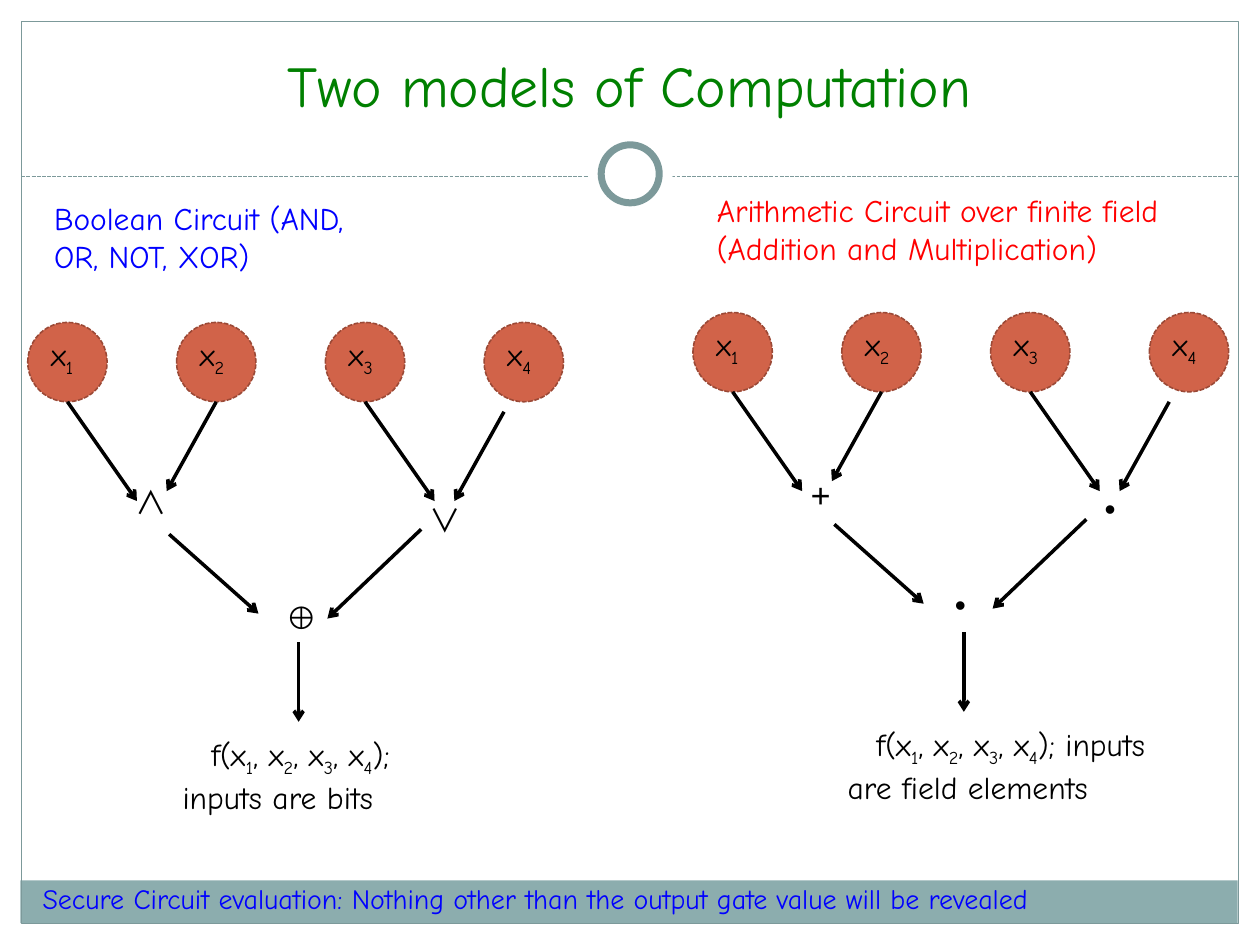
from dataclasses import dataclass
from itertools import groupby

from lxml.etree import SubElement
from pptx import Presentation
from pptx.dml.color import RGBColor
from pptx.enum.dml import MSO_LINE
from pptx.enum.shapes import MSO_CONNECTOR, MSO_SHAPE
from pptx.enum.text import MSO_ANCHOR, MSO_AUTO_SIZE, PP_ALIGN
from pptx.oxml.ns import qn
from pptx.util import Cm, Pt

HAND, SERIF, SANS, MATH = "Comic Neue", "TeX Gyre Schola", "Arial", "Noto Sans CJK JP"
BLACK, WHITE, BLUE, RED, GREEN = "000000", "FFFFFF", "0000FF", "FF0000", "008000"
TEAL, PALE_TEAL, BRICK, DARK_BRICK = "7C999A", "8CADAE", "D16349", "9B4936"

# Positions below are in cm; those of a circuit count from its first input.
INPUT_SIZE = 1.6
INPUT_LEFTS = (0, 3, 6, 9.2)
WIRES = (
    ((0.8, 1.6), (2.2, 3.6)),
    ((3.8, 1.6), (2.8, 3.4)),
    ((6.8, 1.6), (8.2, 3.6)),
    ((9.6, 1.8), (8.6, 3.6)),
    ((2.85, 4.27), (4.65, 5.87)),
    ((7.93, 4.17), (6.04, 5.97)),
    ((5.46, 6.45), (5.46, 8.05)),
)


@dataclass
class Gate:
    symbol: str
    font: str
    left: float
    top: float
    width: float


@dataclass
class Circuit:
    left: float
    top: float
    gates: tuple[Gate, ...]
    output: str
    output_width: float


@dataclass
class Caption:
    text: str
    left: float
    top: float
    width: float
    color: str
    size: float = 18


CAPTIONS = (
    Caption("Secure Circuit evaluation: Nothing other than the output gate value "
            "will be revealed", 0.61, 17.65, 24.28, BLUE, 16),
    Caption("Boolean Circuit (AND, OR, NOT, XOR)", 0.84, 3.89, 7.34, BLUE),
    Caption("Arithmetic Circuit over finite field (Addition and Multiplication)",
            14.2, 3.73, 10.67, RED),
)
CIRCUITS = (
    Circuit(0.56, 6.5, (
        Gate("∧", MATH, 1.93, 3.12, 1.4),
        Gate("∨", MATH, 7.85, 3.48, 1.14),
        Gate("⊕", SERIF, 4.95, 5.44, 1.02),
    ), "f(x1, x2, x3, x4); inputs are bits", 5.97),
    Circuit(13.97, 6.3, (
        Gate("+", SERIF, 2.13, 3.12, 1.4),
        Gate("•", SANS, 8.05, 3.43, 0.81),
        Gate("•", SANS, 5.03, 5.36, 1.4),
    ), "f(x1, x2, x3, x4); inputs are field elements", 6.55),
)


def rgb(color: str) -> RGBColor:
    return RGBColor.from_string(color)


def format_span(span, font: str, size: float, color: str) -> None:
    span.font.name = font
    span.font.size = Pt(size)
    span.font.color.rgb = rgb(color)
    SubElement(span._r.rPr, qn("a:ea")).set("typeface", font)


def add_text(shapes, text: str, left: float, top: float, width: float,
             color: str = BLACK, size: float = 18, font: str = HAND,
             indent: float = 0) -> None:
    """Add a text box in which digits become subscripts."""
    box = shapes.add_textbox(Cm(left), Cm(top), Cm(width), Cm(1.02))
    box.text_frame.word_wrap = True
    box.text_frame.auto_size = MSO_AUTO_SIZE.SHAPE_TO_FIT_TEXT
    para = box.text_frame.paragraphs[0]
    if indent:
        para._p.get_or_add_pPr().set("indent", str(Cm(indent)))
    for is_digit, letters in groupby(text, str.isdigit):
        span = para.add_run()
        span.text = "".join(letters)
        format_span(span, font, size, color)
        if is_digit:
            span._r.rPr.set("baseline", "-25000")


def add_figure(shapes, kind, left: float, top: float, width: float, height: float,
               fill: str | None = None, line: str | None = None, weight: float = 0.75):
    figure = shapes.add_shape(kind, Cm(left), Cm(top), Cm(width), Cm(height))
    figure.shadow.inherit = False
    if fill:
        figure.fill.solid()
        figure.fill.fore_color.rgb = rgb(fill)
    else:
        figure.fill.background()
    if line:
        figure.line.color.rgb = rgb(line)
        figure.line.width = Pt(weight)
    else:
        figure.line.fill.background()
    return figure


def add_line(shapes, start: tuple[float, float], end: tuple[float, float],
             color: str, weight: float):
    line = shapes.add_connector(MSO_CONNECTOR.STRAIGHT, *map(Cm, start + end))
    line.line.color.rgb = rgb(color)
    line.line.width = Pt(weight)
    SubElement(line._element.spPr, qn("a:effectLst"))
    return line


def add_arrow(shapes, start: tuple[float, float], end: tuple[float, float]) -> None:
    arrow = add_line(shapes, start, end, BLACK, 2)
    SubElement(arrow.line._get_or_add_ln(), qn("a:tailEnd")).set("type", "arrow")


def add_frame(shapes) -> None:
    """Add the border, the footer band and the ringed divider."""
    add_figure(shapes, MSO_SHAPE.RECTANGLE, 0.41, 17.75, 24.54, 0.86, PALE_TEAL)
    add_figure(shapes, MSO_SHAPE.RECTANGLE, 0.43, 0.43, 24.54, 18.19, line=TEAL)
    divider = add_line(shapes, (0.43, 3.56), (24.97, 3.56), TEAL, 0.75)
    divider.line.dash_style = MSO_LINE.SQUARE_DOT
    add_figure(shapes, MSO_SHAPE.OVAL, 11.86, 2.67, 1.7, 1.7, WHITE)
    add_figure(shapes, MSO_SHAPE.OVAL, 12.12, 2.92, 1.17, 1.17, WHITE, TEAL, 4)


def add_circuit(shapes, circuit: Circuit) -> None:
    left, top = circuit.left, circuit.top
    for number, offset in enumerate(INPUT_LEFTS, start=1):
        group = shapes.add_group_shape().shapes
        disc = add_figure(group, MSO_SHAPE.OVAL, left + offset, top, INPUT_SIZE,
                          INPUT_SIZE, BRICK, DARK_BRICK, 0.9)
        disc.line.dash_style = MSO_LINE.SQUARE_DOT
        add_text(group, f"x{number}", left + offset + 0.22, top + 0.13, 1.37)
    for (x1, y1), (x2, y2) in WIRES:
        add_arrow(shapes, (left + x1, top + y1), (left + x2, top + y2))
    for gate in circuit.gates:
        add_text(shapes, gate.symbol, left + gate.left, top + gate.top, gate.width,
                 font=gate.font)
    add_text(shapes, circuit.output, left + 2.87, top + 8.19, circuit.output_width,
             indent=0.58)


def format_title(title) -> None:
    title.left, title.top, title.width, title.height = map(Cm, (0.84, 0.41, 23.7, 2.11))
    frame = title.text_frame
    frame.text = "Two models of Computation"
    frame.auto_size = MSO_AUTO_SIZE.NONE
    frame.vertical_anchor = MSO_ANCHOR.BOTTOM
    para = frame.paragraphs[0]
    para.alignment = PP_ALIGN.CENTER
    format_span(para.runs[0], HAND, 33, GREEN)


def main() -> None:
    deck = Presentation()
    deck.slide_width, deck.slide_height = Cm(25.4), Cm(19.05)
    page = deck.slides.add_slide(deck.slide_layouts[5])
    format_title(page.shapes.title)
    add_frame(page.shapes)
    for caption in CAPTIONS:
        add_text(page.shapes, caption.text, caption.left, caption.top, caption.width,
                 caption.color, caption.size)
    for circuit in CIRCUITS:
        add_circuit(page.shapes, circuit)
    deck.save("out.pptx")


if __name__ == "__main__":
    main()
